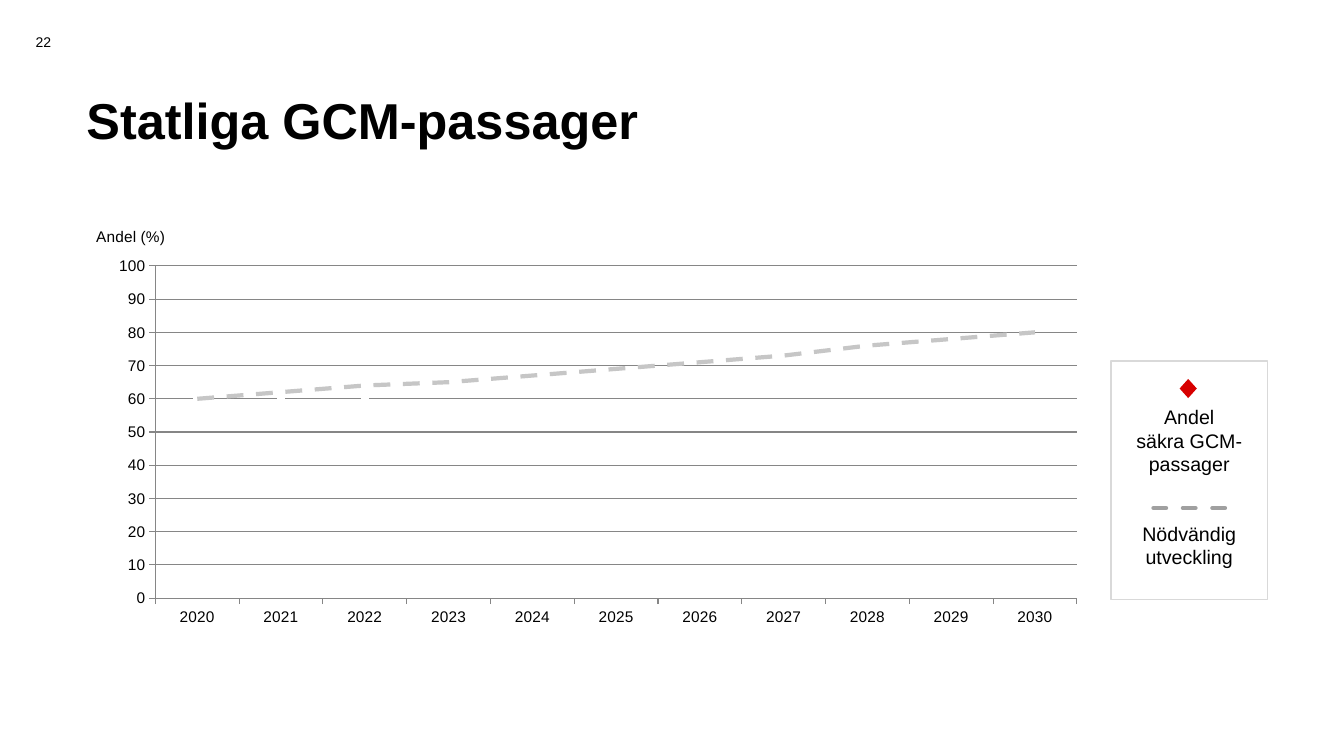
from dataclasses import dataclass

from lxml.etree import SubElement
from pptx import Presentation
from pptx.chart.data import CategoryChartData
from pptx.dml.color import RGBColor
from pptx.enum.chart import XL_CHART_TYPE, XL_MARKER_STYLE, XL_TICK_MARK
from pptx.enum.dml import MSO_LINE
from pptx.enum.shapes import MSO_CONNECTOR, MSO_SHAPE
from pptx.enum.text import MSO_ANCHOR, PP_ALIGN
from pptx.oxml import parse_xml
from pptx.oxml.ns import nsdecls, qn
from pptx.util import Inches, Pt

COLOURS = {
    "text": "000000",
    "background": "FFFFFF",
    "axis": "868686",
    "safe": "D70000",
    "needed": "C6C6C6",
    "key_line": "A0A0A0",
    "key_border": "D9D9D9",
}
FONT = "Arial"
WIDTH, HEIGHT = Inches(13.33), Inches(7.5)


@dataclass(frozen=True)
class Area:
    """Percent of the slide's width and height."""
    left: float
    top: float
    width: float
    height: float

    def box(self) -> tuple[int, int, int, int]:
        return (int(WIDTH * self.left / 100), int(HEIGHT * self.top / 100),
                int(WIDTH * self.width / 100), int(HEIGHT * self.height / 100))


@dataclass(frozen=True)
class Label:
    area: Area
    paragraphs: tuple[str, ...]
    size: int
    bold: bool = False
    alignment: PP_ALIGN = PP_ALIGN.CENTER
    anchor: MSO_ANCHOR = MSO_ANCHOR.MIDDLE
    space_before: int = 0
    line_spacing: float = 1.0


@dataclass(frozen=True)
class KeyShape:
    area: Area
    preset: MSO_SHAPE
    fill: str
    border: str | None = None


TITLE = Label(Area(5.7, 13.2, 88.6, 6.13), ("Statliga GCM-passager",), 36, bold=True,
              alignment=PP_ALIGN.LEFT, line_spacing=0.9)
PAGE_NUMBER = Label(Area(0, 2.93, 6.45, 5.33), ("22",), 10)
KEY_TEXT = Label(Area(83.27, 52.93, 10.43, 23.2),
                 ("Andel\nsäkra GCM-\npassager", "Nödvändig\nutveckling"), 14,
                 anchor=MSO_ANCHOR.TOP, space_before=33)
KEY_PANEL = KeyShape(Area(82.67, 47.73, 11.63, 31.6), MSO_SHAPE.RECTANGLE,
                     "background", "key_border")
KEY_DIAMOND = KeyShape(Area(87.77, 50.13, 1.28, 2.53), MSO_SHAPE.DIAMOND, "safe")
KEY_DASH = Area(85.82, 67.2, 5.33, 0)
CHART_AREA = Area(5.4, 28.27, 77.04, 62.8)
YEARS = [str(year) for year in range(2020, 2031)]
SAFE_SHARE = [60, 60, 61] + [None] * 8
NEEDED_SHARE = [60, 62, 64, 65, 67, 69, 71, 73, 76, 78, 80]


def colour(name: str) -> RGBColor:
    return RGBColor.from_string(COLOURS[name])


def style_font(font, size: int, bold: bool = False) -> None:
    font.name = FONT
    font.size = Pt(size)
    font.bold = bold
    font.color.rgb = colour("text")


def style_line(line, name: str, width: float) -> None:
    line.color.rgb = colour(name)
    line.width = Pt(width)


def draw_label(shapes, label: Label) -> None:
    text_frame = shapes.add_textbox(*label.area.box()).text_frame
    text_frame.word_wrap = True
    text_frame.vertical_anchor = label.anchor
    for index, text in enumerate(label.paragraphs):
        paragraph = text_frame.add_paragraph() if index else text_frame.paragraphs[0]
        paragraph.text = text
        paragraph.alignment = label.alignment
        paragraph.space_before = Pt(label.space_before)
        paragraph.line_spacing = label.line_spacing
        for run in paragraph.runs:
            style_font(run.font, label.size, label.bold)
        for line_break in paragraph._p.findall(qn("a:br")):
            SubElement(line_break, qn("a:rPr"), sz=str(label.size * 100))


def draw_key_shape(shapes, key_shape: KeyShape) -> None:
    shape = shapes.add_shape(key_shape.preset, *key_shape.area.box())
    shape.shadow.inherit = False
    shape.fill.solid()
    shape.fill.fore_color.rgb = colour(key_shape.fill)
    if key_shape.border:
        style_line(shape.line, key_shape.border, 1)
    else:
        shape.line.fill.background()


def draw_key_dash(shapes, area: Area) -> None:
    left, top, width, height = area.box()
    connector = shapes.add_connector(MSO_CONNECTOR.STRAIGHT, left, top, left + width, top + height)
    style_line(connector.line, "key_line", 3)
    connector.line.dash_style = MSO_LINE.DASH
    connector.line._get_or_add_ln().set("cap", "rnd")
    SubElement(connector._element.spPr, qn("a:effectLst"))


def manual_layout(inner: bool = False, **shares: float):
    target = '<c:layoutTarget val="inner"/>' if inner else ""
    modes = "".join(f'<c:{key}Mode val="edge"/>' for key in ("x", "y"))
    values = "".join(f'<c:{key} val="{value}"/>' for key, value in shares.items())
    return parse_xml(f'<c:layout {nsdecls("c")}><c:manualLayout>{target}{modes}{values}'
                     '</c:manualLayout></c:layout>')


def place(element, layout, position: int) -> None:
    for existing in element.findall(qn("c:layout")):
        element.remove(existing)
    element.insert(position, layout)


def draw_chart(shapes) -> None:
    chart_data = CategoryChartData(number_format="0")
    chart_data.categories = YEARS
    chart_data.add_series("Series 1", SAFE_SHARE)
    chart_data.add_series("Series 2", NEEDED_SHARE)
    chart = shapes.add_chart(XL_CHART_TYPE.LINE_MARKERS, *CHART_AREA.box(), chart_data).chart
    chart.has_legend = False
    chart.has_title = False
    style_font(chart.font, 11)
    place(chart._chartSpace.chart.plotArea, manual_layout(True, x=0.08, y=0.11, w=0.89, h=0.7), 0)

    value_axis = chart.value_axis
    value_axis.minimum_scale, value_axis.maximum_scale = 0, 100
    value_axis.major_unit = 10
    value_axis.has_major_gridlines = True
    style_line(value_axis.major_gridlines.format.line, "axis", 0.75)
    value_axis.tick_labels.number_format = "0"
    value_axis.tick_labels.number_format_is_linked = False
    for axis in (chart.category_axis, value_axis):
        axis.major_tick_mark = XL_TICK_MARK.OUTSIDE
        style_line(axis.format.line, "axis", 0.75)
        style_font(axis.tick_labels.font, 11)

    text_frame = value_axis.axis_title.text_frame
    text_frame.text = "Andel (%)"
    style_font(text_frame.paragraphs[0].runs[0].font, 11)
    body = text_frame._txBody.bodyPr
    body.set("rot", "0")
    body.set("vert", "horz")
    place(value_axis.axis_title._element, manual_layout(x=0.02, y=0.02), 1)

    plot = chart.plots[0]
    plot.vary_by_categories = False
    safe, needed = plot.series
    safe.smooth = needed.smooth = False
    safe.format.line.fill.background()
    safe.marker.size = 5
    safe.marker.format.fill.solid()
    safe.marker.format.fill.fore_color.rgb = colour("background")
    safe.marker.format.line.fill.background()
    needed.marker.style = XL_MARKER_STYLE.NONE
    style_line(needed.format.line, "needed", 3)
    needed.format.line.dash_style = MSO_LINE.DASH


def main() -> None:
    presentation = Presentation()
    presentation.slide_width, presentation.slide_height = WIDTH, HEIGHT
    slide = presentation.slides.add_slide(presentation.slide_layouts[6])
    draw_label(slide.shapes, TITLE)
    draw_label(slide.shapes, PAGE_NUMBER)
    draw_chart(slide.shapes)
    key = slide.shapes.add_group_shape().shapes
    draw_key_shape(key, KEY_PANEL)
    draw_label(key, KEY_TEXT)
    draw_key_dash(key, KEY_DASH)
    draw_key_shape(key, KEY_DIAMOND)
    presentation.save("out.pptx")


if __name__ == "__main__":
    main()
